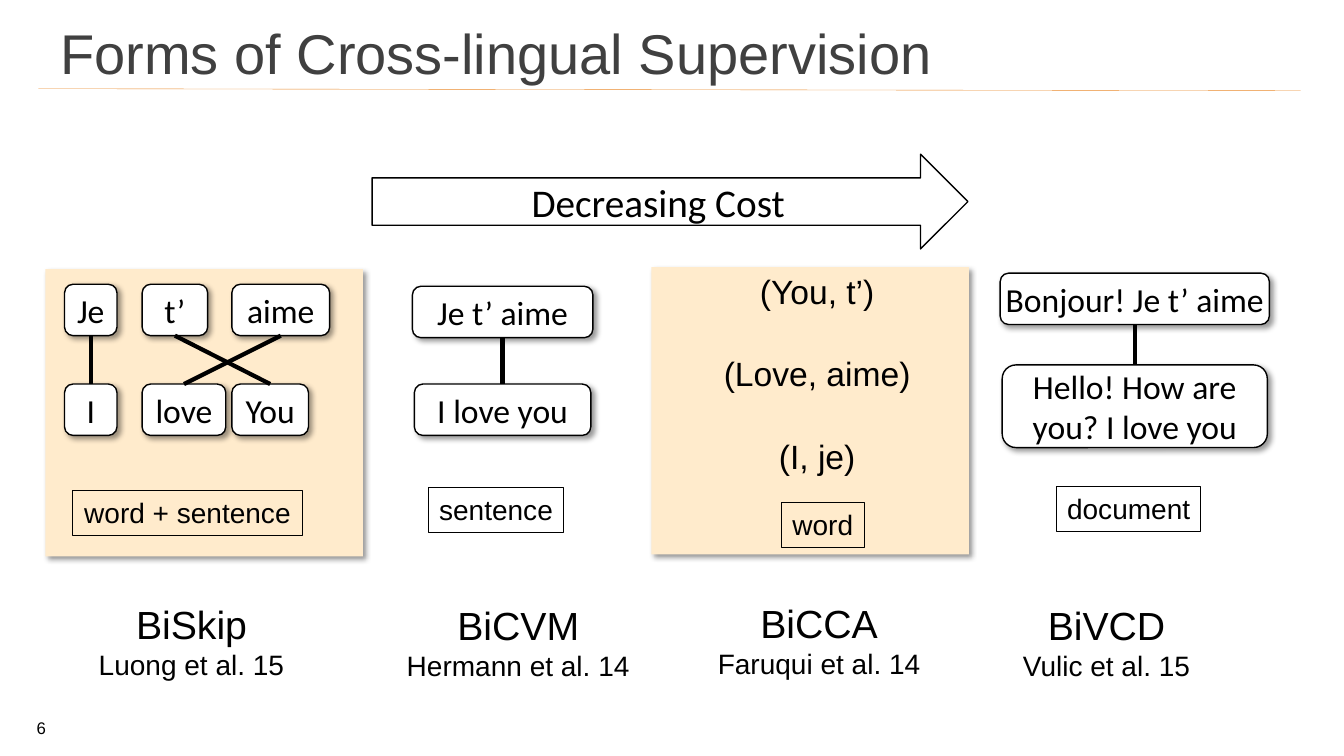
import pptx
import pptx.util
import pptx.dml.color
import pptx.enum.shapes
import pptx.enum.text
import pptx.oxml
import pptx.oxml.ns

Inches = pptx.util.Inches
Pt = pptx.util.Pt
RGBColor = pptx.dml.color.RGBColor
Shape = pptx.enum.shapes.MSO_SHAPE
Connector = pptx.enum.shapes.MSO_CONNECTOR
Align = pptx.enum.text.PP_ALIGN
Anchor = pptx.enum.text.MSO_ANCHOR
AutoSize = pptx.enum.text.MSO_AUTO_SIZE

BLACK = RGBColor(0x00, 0x00, 0x00)
WHITE = RGBColor(0xFF, 0xFF, 0xFF)
CREAM = RGBColor(0xFF, 0xEB, 0xCC)
ORANGE = RGBColor(0xEA, 0x8A, 0x2A)
TITLE_GRAY = RGBColor(0x40, 0x40, 0x40)

PANEL_WIDTH, PANEL_HEIGHT = 3.15, 2.85
WORD_HEIGHT = 0.51
TAG_HEIGHT = 0.44
SHADOW = (
    '<a:effectLst %s><a:outerShdw blurRad="50800" dist="38100" dir="2700000" algn="tl" '
    'rotWithShape="0"><a:srgbClr val="000000"><a:alpha val="40000"/></a:srgbClr>'
    '</a:outerShdw></a:effectLst>' % pptx.oxml.ns.nsdecls("a"))


def write(holder, lines, sizes, font="Arial", gap=0, wrap=False, anchor=Anchor.TOP):
    """Fill a shape with centred lines, one size for each."""
    frame = holder.text_frame
    frame.text = "\n".join(lines)
    frame.word_wrap = wrap
    frame.vertical_anchor = anchor
    for index, (paragraph, size) in enumerate(zip(frame.paragraphs, sizes)):
        paragraph.alignment = Align.CENTER
        if index:
            paragraph.space_before = Pt(gap)
        for run in paragraph.runs:
            run.font.size = Pt(size)
            run.font.name = font
            run.font.color.rgb = BLACK


def outlined(slide, kind, box, fill=None, line_width=None, shadow=False):
    """Add a preset shape with its fill, outline and shadow."""
    shape = slide.shapes.add_shape(kind, *map(Inches, box))
    if fill is None:
        shape.fill.background()
    else:
        shape.fill.solid()
        shape.fill.fore_color.rgb = fill
    if line_width is None:
        shape.line.fill.background()
    else:
        shape.line.color.rgb = BLACK
        shape.line.width = Pt(line_width)
    if shadow:
        shape._element.spPr.append(pptx.oxml.parse_xml(SHADOW))
    else:
        shape.shadow.inherit = False
    return shape


def straight_line(slide, start, end, color, width):
    """Add a plain straight line between two points."""
    line = slide.shapes.add_connector(Connector.STRAIGHT, *map(Inches, start + end))
    line.line.color.rgb = color
    line.line.width = Pt(width)
    effects = '<a:effectLst %s/>' % pptx.oxml.ns.nsdecls("a")
    line._element.spPr.append(pptx.oxml.parse_xml(effects))
    return line


def phrase(slide, text, box):
    """Add a rounded box holding a word or phrase."""
    bubble = outlined(slide, Shape.ROUNDED_RECTANGLE, box, WHITE, 1, shadow=True)
    write(bubble, [text], [24], "Calibri", wrap=True, anchor=Anchor.MIDDLE)
    return bubble


def align_phrases(slide, upper, lower):
    """Join the bottom of one phrase to the top of another."""
    link = straight_line(slide, (0, 0), (0, 0), BLACK, 3)
    link.begin_connect(upper, 2)
    link.end_connect(lower, 0)


def level_tag(slide, text, left, top, width):
    """Add the framed name of the supervision level."""
    tag = outlined(slide, Shape.RECTANGLE, (left, top, width, TAG_HEIGHT), line_width=0.75)
    write(tag, [text], [20])


def caption(slide, model, citation, left, top, width):
    """Add a model name above its citation."""
    label = slide.shapes.add_textbox(*map(Inches, (left, top, width, 0.91)))
    write(label, [model, citation], [28, 20])


def panel(slide, left, top):
    """Add a shaded panel."""
    outlined(slide, Shape.RECTANGLE, (left, top, PANEL_WIDTH, PANEL_HEIGHT), CREAM, shadow=True)


def header(slide, left, top, width, height):
    """Place the title and the rule beneath it."""
    title = slide.shapes.title
    title.left, title.top, title.width, title.height = map(Inches, (left, top, width, height))
    frame = title.text_frame
    frame.text = "Forms of Cross-lingual Supervision"
    frame.auto_size = AutoSize.NONE
    frame.vertical_anchor = Anchor.MIDDLE
    frame.paragraphs[0].alignment = Align.LEFT
    font = frame.paragraphs[0].runs[0].font
    font.size, font.name, font.color.rgb = Pt(40), "Arial", TITLE_GRAY
    straight_line(slide, (left - 0.12, top + 0.65), (left + 12.4, top + 0.67), ORANGE, 0.25)


def cost_arrow(slide, left, top, width, height):
    """Place the arrow of decreasing cost."""
    arrow = outlined(slide, Shape.RIGHT_ARROW, (left, top, width, height), WHITE, 1)
    write(arrow, ["Decreasing Cost"], [28], "Calibri", wrap=True, anchor=Anchor.MIDDLE)


def word_alignment(slide, left, top):
    """Place the BiSkip panel with its aligned words."""
    panel(slide, left, top)
    french = [("Je", 0.19, 0.52), ("t’", 0.96, 0.65), ("aime", 1.85, 0.97)]
    english = [("I", 0.19, 0.52), ("love", 0.96, 0.83), ("You", 1.85, 0.76)]
    upper, lower = [
        [phrase(slide, word, (left + x, top + y, width, WORD_HEIGHT)) for word, x, width in words]
        for words, y in ((french, 0.15), (english, 1.14))]
    for source, target in ((0, 0), (2, 1), (1, 2)):
        align_phrases(slide, upper[source], lower[target])
    level_tag(slide, "word + sentence", left + 0.27, top + 2.2, 2.28)
    caption(slide, "BiSkip", "Luong et al. 15", left + 0.43, top + 3.24, 2.04)


def word_pairs(slide, left, top):
    """Place the BiCCA panel with its dictionary pairs."""
    panel(slide, left, top)
    pairs = slide.shapes.add_textbox(*map(Inches, (left + 0.61, top - 0.01, 2.07, 2.1)))
    write(pairs, ["(You, t’)", "(Love, aime)", "(I, je)"], [24] * 3, gap=30)
    level_tag(slide, "word", left + 1.29, top + 2.34, 0.82)
    caption(slide, "BiCCA", "Faruqui et al. 14", left + 0.55, top + 3.25, 2.23)


def text_pair(slide, left, top, width, french, english, drop, english_height):
    """Place a French text joined to its English counterpart."""
    source = phrase(slide, french, (left, top, width, WORD_HEIGHT))
    source.text_frame.margin_left = source.text_frame.margin_right = 0
    target = phrase(slide, english, (left + 0.02, top + drop, width - 0.04, english_height))
    align_phrases(slide, source, target)


def sentence_alignment(slide, left, top):
    """Place the BiCVM column."""
    text_pair(slide, left, top, 1.79, "Je t’ aime", "I love you", 0.97, WORD_HEIGHT)
    level_tag(slide, "sentence", left + 0.16, top + 2, 1.34)
    caption(slide, "BiCVM", "Hermann et al. 14", left - 0.16, top + 3.08, 2.42)


def document_alignment(slide, left, top):
    """Place the BiVCD column."""
    text_pair(slide, left, top, 2.67, "Bonjour! Je t’ aime",
              "Hello! How are you? I love you", 0.91, 0.82)
    level_tag(slide, "document", left + 0.56, top + 2.12, 1.43)
    caption(slide, "BiVCD", "Vulic et al. 15", left + 0.12, top + 3.21, 1.87)


def page_number(slide, left, top, width, height):
    """Place the page number."""
    number = slide.shapes.add_textbox(*map(Inches, (left, top, width, height)))
    write(number, ["6"], [12], wrap=True, anchor=Anchor.BOTTOM)


def main():
    """Build and save the slide."""
    deck = pptx.Presentation()
    deck.slide_width, deck.slide_height = Inches(13.33), Inches(7.5)
    slide = deck.slides.add_slide(deck.slide_layouts[5])
    header(slide, 0.5, 0.23, 11.61, 0.58)
    cost_arrow(slide, 3.69, 1.53, 5.91, 0.94)
    word_alignment(slide, 0.45, 2.67)
    sentence_alignment(slide, 4.09, 2.84)
    word_pairs(slide, 6.46, 2.65)
    document_alignment(slide, 9.92, 2.71)
    page_number(slide, 0.13, 7.12, 0.56, 0.25)
    deck.save("out.pptx")


if __name__ == "__main__":
    main()
